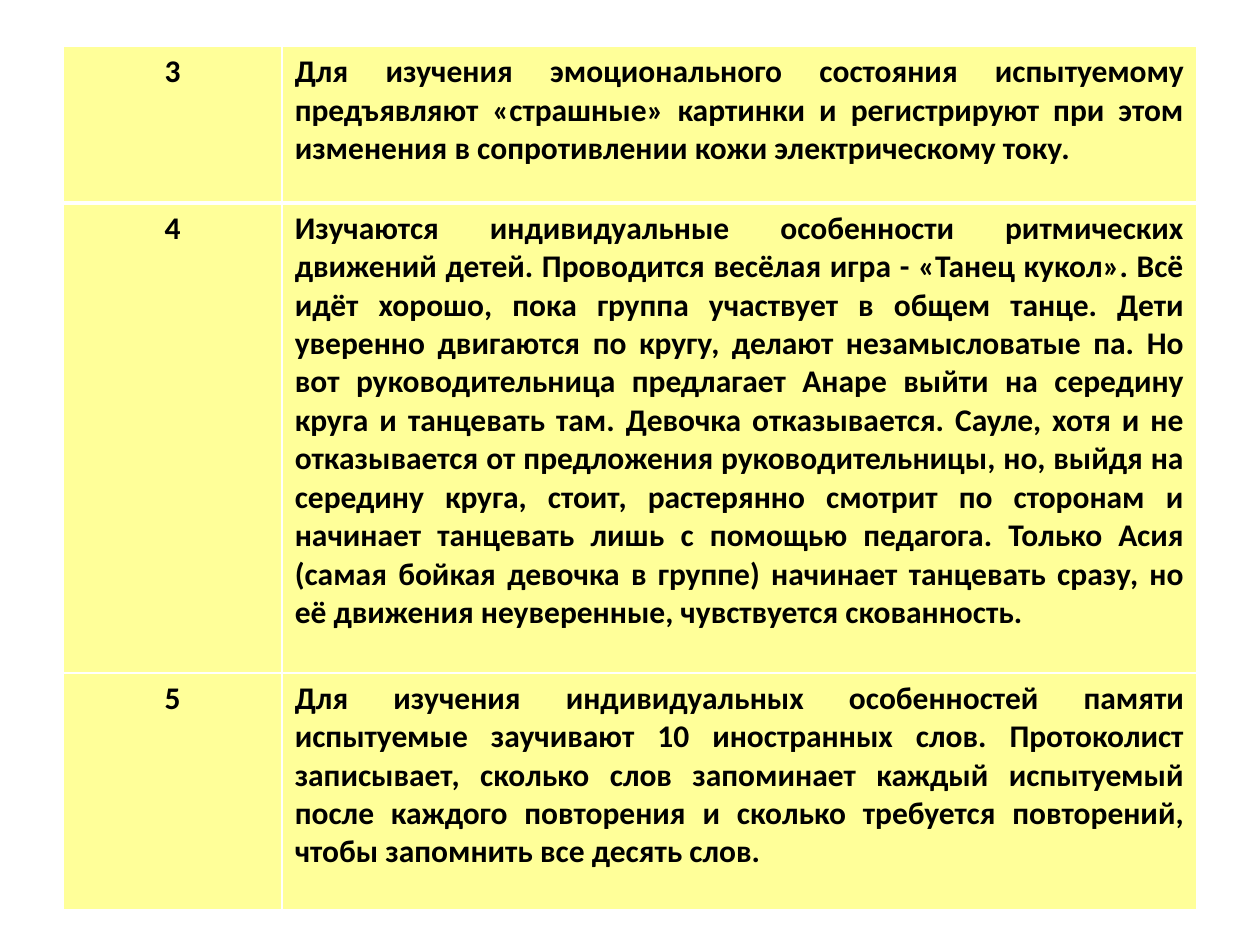
from lxml import etree
from pptx import Presentation
from pptx.dml.color import RGBColor
from pptx.enum.text import PP_ALIGN
from pptx.oxml.ns import qn
from pptx.util import Inches, Pt

CENTER, JUSTIFY = PP_ALIGN.CENTER, PP_ALIGN.JUSTIFY
SLIDE_W, SLIDE_H = Inches(10), Inches(7.5)
YELLOW, WHITE, BLACK = "FFFF99", "FFFFFF", "000000"
FONT_FORMAT = {"name": "Calibri", "size": Pt(18), "bold": True}
THIN, THICK = 1, 3

# Shares of the table's width and height
COLUMN_SHARES = (1.74 / 9, 7.26 / 9)
ROW_SHARES = (1.24 / 6.85, 3.73 / 6.85, 1.88 / 6.85)

SITUATIONS = [
    ("3", "Для изучения эмоционального состояния испытуемому предъявляют "
          "«страшные» картинки и регистрируют при этом изменения в "
          "сопротивлении кожи электрическому току."),
    ("4", "Изучаются индивидуальные особенности ритмических движений детей. "
          "Проводится весёлая игра - «Танец кукол». Всё идёт хорошо, пока "
          "группа участвует в общем танце. Дети уверенно двигаются по кругу, "
          "делают незамысловатые па. Но вот руководительница предлагает Анаре "
          "выйти на середину круга и танцевать там. Девочка отказывается. "
          "Сауле, хотя и не отказывается от предложения руководительницы, но, "
          "выйдя на середину круга, стоит, растерянно смотрит по сторонам и "
          "начинает танцевать лишь с помощью педагога. Только Асия (самая "
          "бойкая девочка в группе) начинает танцевать сразу, но её движения "
          "неуверенные, чувствуется скованность."),
    ("5", "Для изучения индивидуальных особенностей памяти испытуемые "
          "заучивают 10 иностранных слов. Протоколист записывает, сколько "
          "слов запоминает каждый испытуемый после каждого повторения и "
          "сколько требуется повторений, чтобы запомнить все десять слов."),
]


def color(hex_value):
    return RGBColor.from_string(hex_value)


def set_borders(cell, widths):
    """Draw white borders; widths maps a side to its width in points."""
    properties = cell._tc.get_or_add_tcPr()
    for position, (side, width) in enumerate(widths.items()):
        line = etree.Element(qn(f"a:ln{side}"), w=str(Pt(width)))
        fill = etree.SubElement(line, qn("a:solidFill"))
        etree.SubElement(fill, qn("a:srgbClr"), val=WHITE)
        properties.insert(position, line)


def fill_cell(cell, text, alignment):
    cell.fill.solid()
    cell.fill.fore_color.rgb = color(YELLOW)
    paragraph = cell.text_frame.paragraphs[0]
    paragraph.alignment = alignment
    run = paragraph.add_run()
    run.text = text
    for attribute, value in FONT_FORMAT.items():
        setattr(run.font, attribute, value)
    run.font.color.rgb = color(BLACK)


def add_situations(slide, left, top, width, height):
    table = slide.shapes.add_table(
        len(SITUATIONS), len(COLUMN_SHARES), left, top, width, height).table
    for column, share in zip(table.columns, COLUMN_SHARES):
        column.width = round(width * share)
    for row, share in zip(table.rows, ROW_SHARES):
        row.height = round(height * share)

    # Number centred, description justified; thick rule under the first row
    for row_index, situation in enumerate(SITUATIONS):
        borders = {"L": THIN, "R": THIN,
                   "T": THICK if row_index == 1 else THIN,
                   "B": THICK if row_index == 0 else THIN}
        for column_index, (text, alignment) in enumerate(
                zip(situation, (CENTER, JUSTIFY))):
            cell = table.cell(row_index, column_index)
            fill_cell(cell, text, alignment)
            set_borders(cell, borders)


def main():
    presentation = Presentation()
    presentation.slide_width, presentation.slide_height = SLIDE_W, SLIDE_H
    slide = presentation.slides.add_slide(presentation.slide_layouts[6])
    add_situations(slide, Inches(0.5), Inches(0.37), Inches(9), Inches(6.85))
    presentation.save("out.pptx")


if __name__ == "__main__":
    main()
